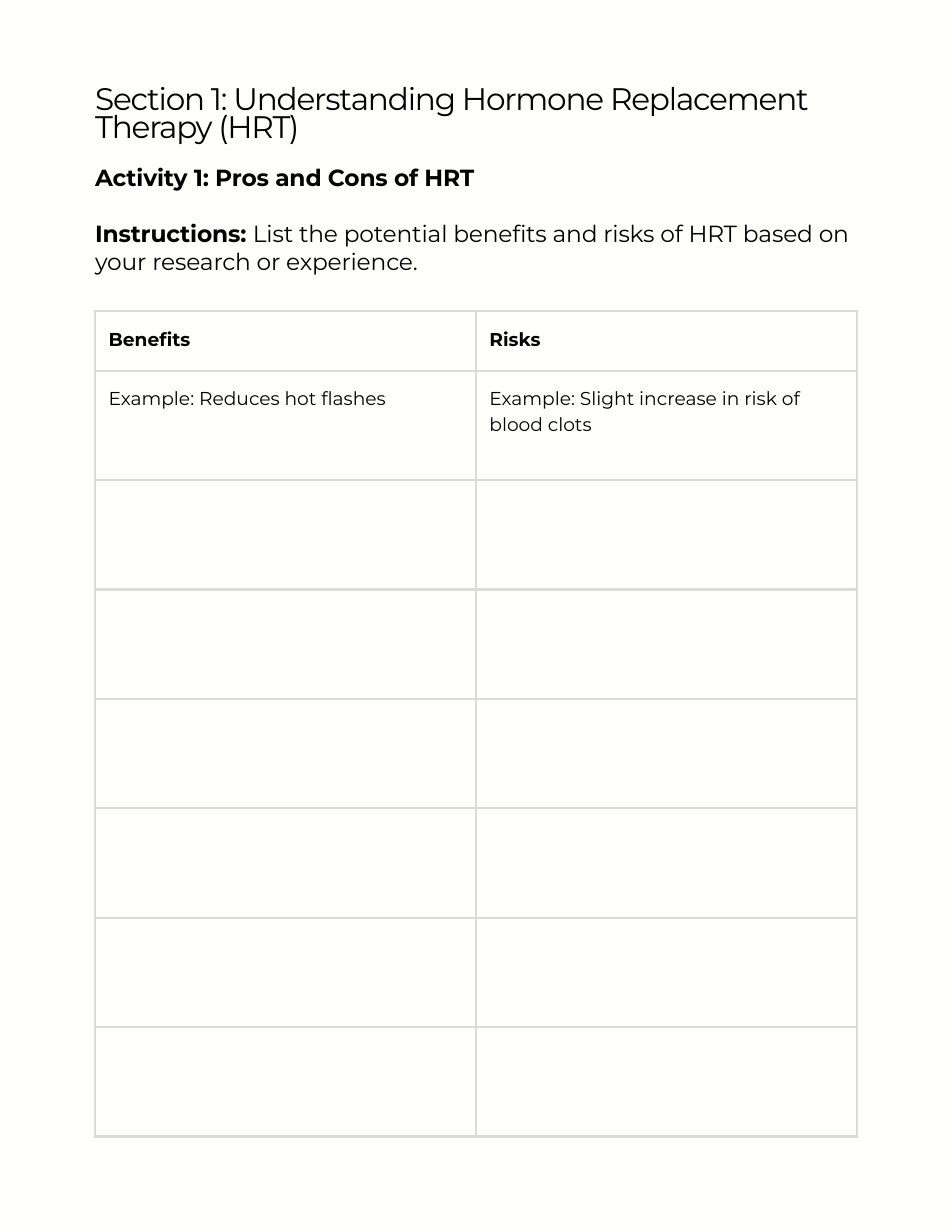
from lxml import etree
from pptx import Presentation
from pptx.dml.color import RGBColor
from pptx.oxml.ns import qn
from pptx.util import Inches, Pt

BACKGROUND = RGBColor(0xFF, 0xFF, 0xFC)
INK = RGBColor(0x00, 0x00, 0x00)
GRID = RGBColor(0xDB, 0xDB, 0xDB)
FONT = "Montserrat"

PAGE_WIDTH, PAGE_HEIGHT = 8.5, 11
MARGIN = 0.85
CONTENT_WIDTH = PAGE_WIDTH - 2 * MARGIN
HEADER_HEIGHT = 0.53
CELL_PADDING = Inches(0.12)
BLANK_LAYOUT = 6

TABLE_ROWS = [
    ("Benefits", "Risks"),
    ("Example: Reduces hot flashes", "Example: Slight increase in risk of blood clots"),
] + [("", "")] * 6


def write_runs(paragraph, runs, size, line_spacing, tracking=0):
    """Add (text, bold) runs; tracking is in points."""
    paragraph.line_spacing = Pt(line_spacing)
    for text, bold in runs:
        run = paragraph.add_run()
        run.text = text
        run.font.name = FONT
        run.font.size = Pt(size)
        run.font.bold = bold
        run.font.color.rgb = INK
        if tracking:
            run.font._element.set("spc", str(round(tracking * 100)))


def add_text_frame(slide, box):
    text_frame = slide.shapes.add_textbox(*map(Inches, box)).text_frame
    text_frame.word_wrap = True
    text_frame.margin_left = text_frame.margin_right = 0
    text_frame.margin_top = text_frame.margin_bottom = 0
    return text_frame


def add_section_title(slide, box):
    text_frame = add_text_frame(slide, box)
    title = "Section 1: Understanding Hormone Replacement Therapy (HRT)"
    write_runs(text_frame.paragraphs[0], [(title, False)], 20, 18, -0.8)


def add_activity(slide, box):
    text_frame = add_text_frame(slide, box)
    heading = text_frame.paragraphs[0]
    write_runs(heading, [("Activity 1: Pros and Cons of HRT", True)], 15, 18, -0.1)
    instructions = text_frame.add_paragraph()
    instructions.space_before = Pt(18)
    write_runs(instructions, [
        ("Instructions: ", True),
        ("List the potential benefits and risks of HRT based on "
         "your research or experience.", False),
    ], 15, 18, -0.1)


def set_borders(cell, color, width):
    properties = cell._tc.get_or_add_tcPr()
    for side in ("a:lnL", "a:lnR", "a:lnT", "a:lnB"):
        line = etree.SubElement(properties, qn(side), w=str(Pt(width)))
        fill = etree.SubElement(line, qn("a:solidFill"))
        etree.SubElement(fill, qn("a:srgbClr"), val=str(color))


def add_pros_and_cons_table(slide, box):
    row_count, column_count = len(TABLE_ROWS), len(TABLE_ROWS[0])
    table = slide.shapes.add_table(row_count, column_count, *map(Inches, box)).table
    table.first_row = table.horz_banding = False
    body_height = (box[3] - HEADER_HEIGHT) / (row_count - 1)
    for row_index, texts in enumerate(TABLE_ROWS):
        is_header = row_index == 0
        table.rows[row_index].height = Inches(HEADER_HEIGHT if is_header else body_height)
        for column_index, text in enumerate(texts):
            cell = table.cell(row_index, column_index)
            cell.margin_left = cell.margin_right = CELL_PADDING
            cell.margin_top = cell.margin_bottom = CELL_PADDING
            set_borders(cell, GRID, 1.5)
            cell.fill.background()
            if text:
                write_runs(cell.text_frame.paragraphs[0], [(text, is_header)], 12, 16.8)


def main():
    presentation = Presentation()
    presentation.slide_width = Inches(PAGE_WIDTH)
    presentation.slide_height = Inches(PAGE_HEIGHT)
    slide = presentation.slides.add_slide(presentation.slide_layouts[BLANK_LAYOUT])
    slide.background.fill.solid()
    slide.background.fill.fore_color.rgb = BACKGROUND

    add_section_title(slide, (MARGIN, 0.79, CONTENT_WIDTH, 0.51))
    add_activity(slide, (MARGIN, 1.46, CONTENT_WIDTH, 0.93))
    add_pros_and_cons_table(slide, (MARGIN, 2.78, CONTENT_WIDTH, 7.37))
    presentation.save("out.pptx")


if __name__ == "__main__":
    main()
